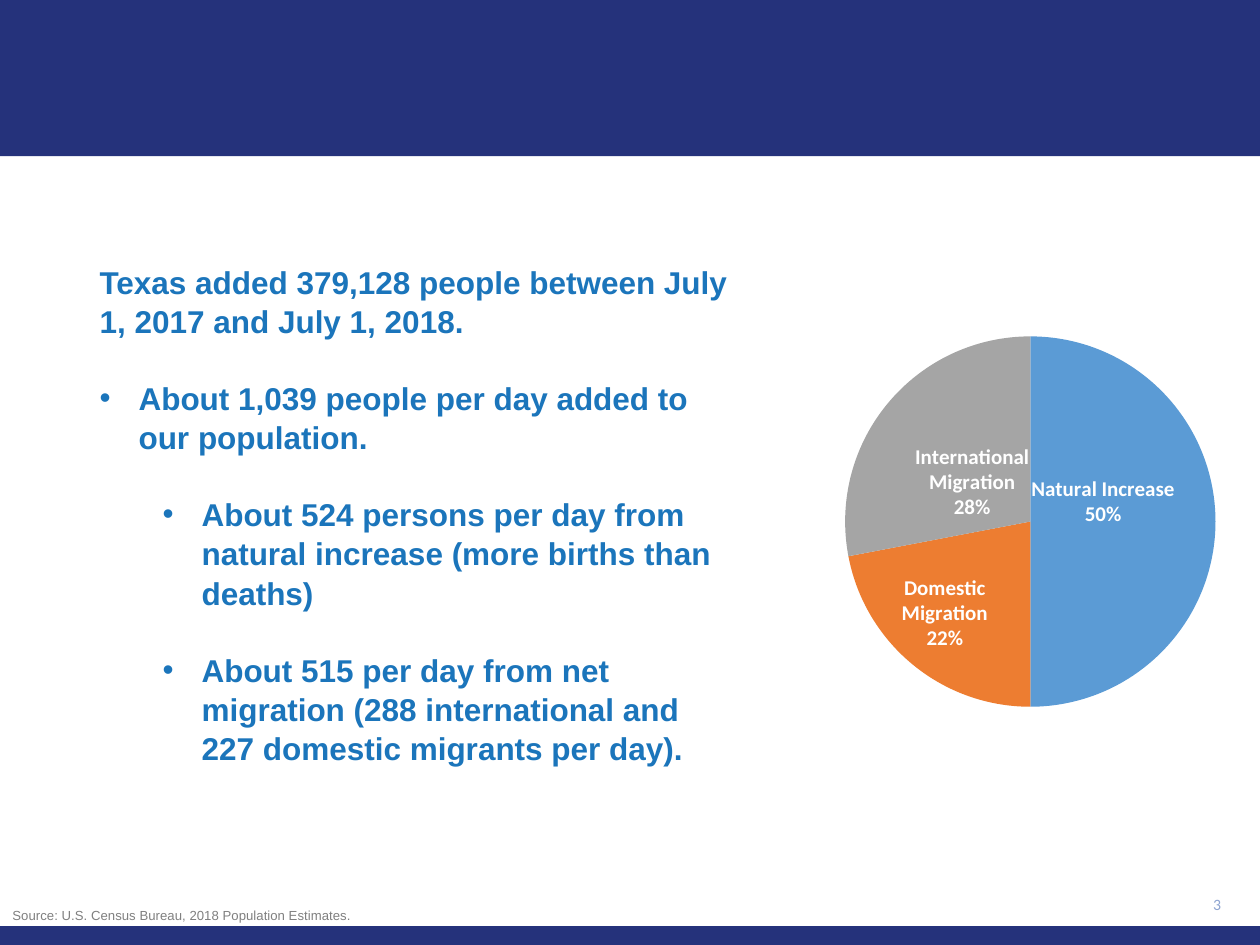
from lxml import etree
from pptx import Presentation
from pptx.chart.data import CategoryChartData
from pptx.dml.color import RGBColor
from pptx.enum.chart import XL_CHART_TYPE, XL_LABEL_POSITION
from pptx.enum.shapes import MSO_SHAPE
from pptx.enum.text import MSO_ANCHOR, MSO_AUTO_SIZE, PP_ALIGN
from pptx.oxml import parse_xml
from pptx.oxml.ns import nsdecls, qn
from pptx.util import Inches, Pt

PIE = XL_CHART_TYPE.PIE
CENTER = XL_LABEL_POSITION.CENTER
RECTANGLE = MSO_SHAPE.RECTANGLE
MIDDLE, TOP = MSO_ANCHOR.MIDDLE, MSO_ANCHOR.TOP
NO_AUTOFIT = MSO_AUTO_SIZE.NONE
LEFT, RIGHT = PP_ALIGN.LEFT, PP_ALIGN.RIGHT


def set_font(font, name, size, color, bold=False):
    font.name, font.size, font.bold = name, Pt(size), bold
    font.color.rgb = RGBColor.from_string(color)


def manual_layout(x, y, width=None, height=None):
    """Chart layout in fractions; a size makes it an inner plot area."""
    parts = [("x", x), ("y", y)]
    if width is not None:
        parts = [("layoutTarget", "inner"), ("xMode", "edge"), ("yMode", "edge"),
                 *parts, ("w", width), ("h", height)]
    children = "".join(f'<c:{tag} val="{value}"/>' for tag, value in parts)
    return parse_xml(f'<c:layout {nsdecls("c")}><c:manualLayout>{children}'
                     '</c:manualLayout></c:layout>')


presentation = Presentation()
presentation.slide_width, presentation.slide_height = Inches(10), Inches(7.5)
slide = presentation.slides.add_slide(presentation.slide_layouts[1])
title = slide.shapes.title.element
title.getparent().remove(title)

# Header and footer bands
for top, height in [(0, 1.24), (7.35, 0.15)]:
    band = slide.shapes.add_shape(RECTANGLE, 0, Inches(top), Inches(10), Inches(height))
    band.shadow.inherit = False
    band.fill.solid()
    band.fill.fore_color.rgb = RGBColor.from_string("25327B")
    band.line.fill.background()

# Population list: text, level, left margin, has bullet
items = [
    ("Texas added 379,128 people between July 1, 2017 and July 1, 2018.", 0, 0, False),
    ("About 1,039 people per day added to our population.", 0, 0.31, True),
    ("About 524 persons per day from natural increase (more births than deaths)",
     1, 0.81, True),
    ("About 515 per day from net migration (288 international and 227 domestic "
     "migrants per day).", 1, 0.81, True),
]
body = slide.placeholders[1]
body.left, body.top = Inches(0.69), Inches(2.06)
body.width, body.height = Inches(5.25), Inches(4.04)
text_frame = body.text_frame
text_frame.auto_size = NO_AUTOFIT
text_frame.vertical_anchor = MIDDLE
text_frame.text = "\n".join(item[0] for item in items)
for index, (paragraph, item) in enumerate(zip(text_frame.paragraphs, items)):
    text, level, margin, has_bullet = item
    paragraph.level = level
    paragraph.line_spacing = 1.04
    paragraph.space_before = Pt(21.5 if index else 0)
    properties = paragraph._p.get_or_add_pPr()
    properties.set("marL", str(Inches(margin)))
    properties.set("indent", str(Inches(-0.31 if has_bullet else 0)))
    if has_bullet:
        etree.SubElement(properties, qn("a:buFont"), typeface="Arial")
        etree.SubElement(properties, qn("a:buChar"), char="•")
    else:
        etree.SubElement(properties, qn("a:buNone"))
    set_font(paragraph.runs[0].font, "Arial", 18, "1B75BB", True)

# Pie chart: category, value, colour, label offset from the slice centre
slices = [
    ("Natural Increase", 50, "5B9BD5", (-0.03, -0.04)),
    ("Domestic Migration", 22, "ED7D31", (-0.04, 0.04)),
    ("International Migration", 28, "A5A5A5", (0.02, 0.04)),
]
chart_data = CategoryChartData()
chart_data.categories = [item[0] for item in slices]
chart_data.add_series("Series 1", [item[1] for item in slices])
chart = slide.shapes.add_chart(PIE, Inches(5.5), Inches(2.19), Inches(5.25),
                               Inches(3.98), chart_data).chart
chart.has_legend = False
chart.has_title = False
set_font(chart.font, "Calibri", 10, "000000")

plot = chart.plots[0]
plot.vary_by_categories = True
plot_area = chart._chartSpace.chart.plotArea
for layout in plot_area.findall(qn("c:layout")):
    plot_area.remove(layout)
plot_area.insert(0, manual_layout(0.23, 0.12, 0.56, 0.74))

series = plot.series[0]
labels = series.data_labels
labels.show_value = False
labels.show_category_name = True
labels.show_percentage = True
labels.position = CENTER
set_font(labels.font, "Calibri", 12, "FFFFFF", True)
for index, (category, value, color, offset) in enumerate(slices):
    point = series.points[index]
    point.format.fill.solid()
    point.format.fill.fore_color.rgb = RGBColor.from_string(color)
    point.format.line.fill.background()
    set_font(point.data_label.font, "Calibri", 12, "FFFFFF", True)
    point.data_label.position = CENTER

# Move each label and show the category above the percentage
for label, item in zip(series._element.iter(qn("c:dLbl")), slices):
    label.insert(1, manual_layout(*item[3]))
    for tag, shown in [("c:showVal", "0"), ("c:showCatName", "1"), ("c:showPercent", "1")]:
        label.find(qn(tag)).set("val", shown)
    etree.SubElement(label, qn("c:separator")).text = "\n"

# Source line and slide number
notes = [
    ("Source: U.S. Census Bureau, 2018 Population Estimates.",
     (0, 7.15, 4.48, 0.35), "Arial", 7.5, "808080", LEFT, TOP),
    ("3", (8.9, 7.01, 0.89, 0.34), "Calibri", 9, "8FA5D1", RIGHT, MIDDLE),
]
for text, place, font_name, size, color, alignment, anchor in notes:
    text_frame = slide.shapes.add_textbox(*map(Inches, place)).text_frame
    text_frame.word_wrap = True
    text_frame.vertical_anchor = anchor
    text_frame.text = text
    paragraph = text_frame.paragraphs[0]
    paragraph.alignment = alignment
    set_font(paragraph.runs[0].font, font_name, size, color)

presentation.save("out.pptx")
